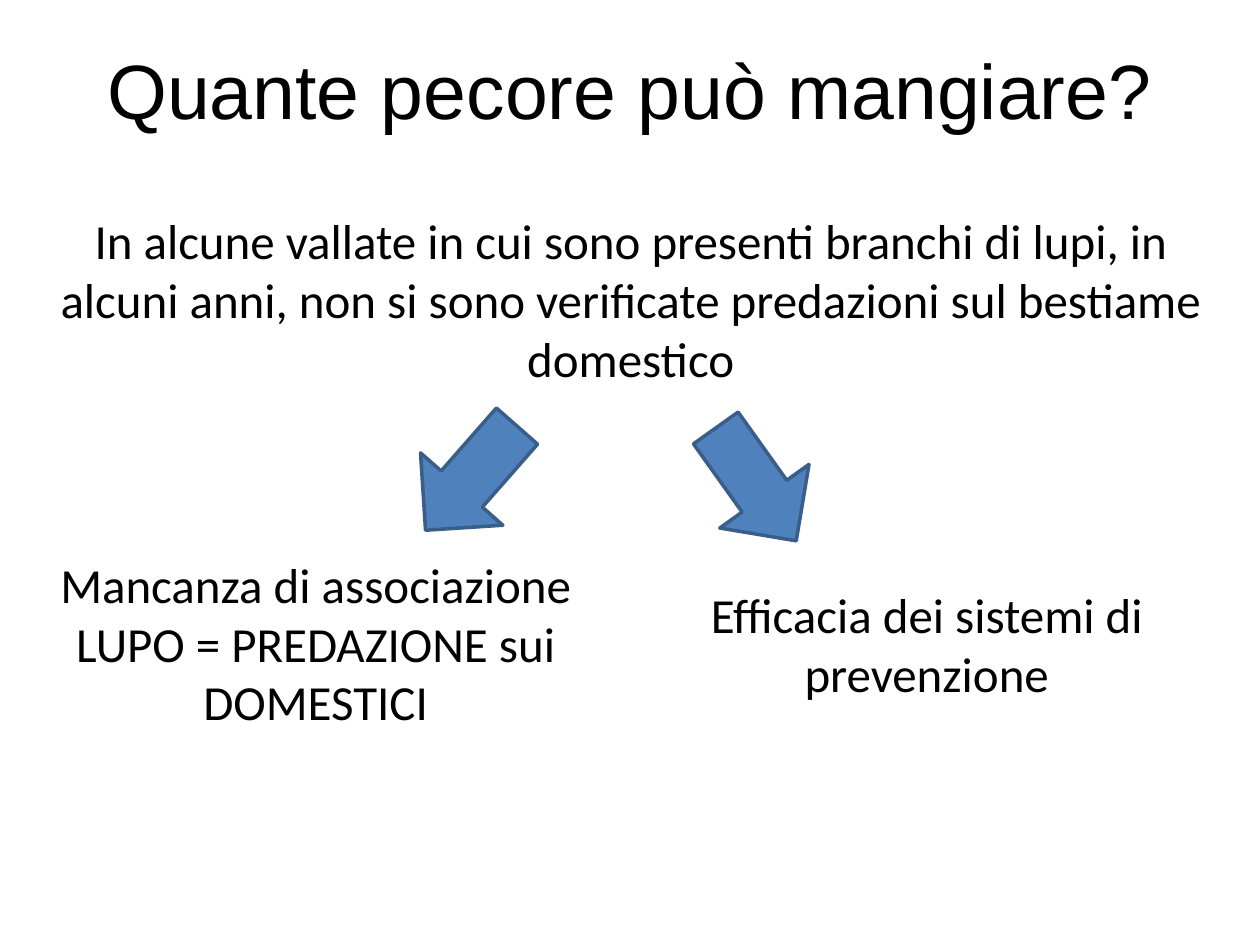
from pptx import Presentation
from pptx import util as u
from pptx.dml.color import RGBColor
from pptx.enum import shapes, text

BLACK = RGBColor(0x00, 0x00, 0x00)
BLUE = RGBColor(0x4F, 0x81, 0xBD)
DARK_BLUE = RGBColor(0x39, 0x5E, 0x89)

TITLE = {"name": "Arial", "size": u.Pt(44)}
BODY = {"name": "Calibri", "size": u.Pt(28)}


class SlideBuilder:
    """Holds the style and the slide; lengths are in grid units of 0.1 inch."""

    COLUMNS, ROWS = 100, 75

    def __init__(self, presentation):
        self.unit_x = presentation.slide_width / self.COLUMNS
        self.unit_y = presentation.slide_height / self.ROWS
        self.slide = presentation.slides.add_slide(presentation.slide_layouts[6])

    def place(self, left, top, width, height):
        return (round(left * self.unit_x), round(top * self.unit_y),
                round(width * self.unit_x), round(height * self.unit_y))

    def add_text(self, box, lines, style=BODY, inset=0.05, spacing=1.0):
        frame = self.slide.shapes.add_textbox(*self.place(*box)).text_frame
        frame_format = {"word_wrap": True, "vertical_anchor": text.MSO_ANCHOR.TOP,
                        "margin_top": u.Inches(inset), "margin_bottom": u.Inches(inset)}
        for name, value in frame_format.items():
            setattr(frame, name, value)
        frame.text = "\n".join(lines)
        for paragraph in frame.paragraphs:
            paragraph.alignment = text.PP_ALIGN.CENTER
            paragraph.line_spacing = spacing
            for name, value in style.items():
                setattr(paragraph.font, name, value)
            paragraph.font.color.rgb = BLACK

    def add_arrow(self, box, rotation):
        shape = self.slide.shapes.add_shape(shapes.MSO_SHAPE.RIGHT_ARROW, *self.place(*box))
        shape.rotation = rotation
        shape.shadow.inherit = False
        shape.fill.solid()
        shape.fill.fore_color.rgb = BLUE
        shape.line.color.rgb = DARK_BLUE
        shape.line.width = u.Pt(2)


def main():
    presentation = Presentation()
    presentation.slide_width, presentation.slide_height = u.Inches(10), u.Inches(7.5)
    builder = SlideBuilder(presentation)

    # Title and opening statement
    builder.add_text((5, 3, 90, 12.5), ["Quante pecore può mangiare?"],
                     TITLE, inset=0.1, spacing=0.93)
    builder.add_text((2.8, 16.2, 94.5, 15.1), [
        "In alcune vallate in cui sono presenti branchi di lupi, in alcuni anni, "
        "non si sono verificate predazioni sul bestiame domestico"])

    # The two explanations
    builder.add_text((53.1, 45.9, 40.9, 10.4), ["Efficacia dei sistemi di prevenzione"])
    builder.add_text((2.6, 43.5, 44.9, 15.1),
                     ["Mancanza di associazione", "LUPO = PREDAZIONE sui DOMESTICI"])

    # Arrows from the statement to each explanation
    for left, top, rotation in ((31.9, 33.6, 131.3), (54.5, 34.1, 54.5)):
        builder.add_arrow((left, top, 11, 8.7), rotation)

    presentation.save("out.pptx")


if __name__ == "__main__":
    main()
